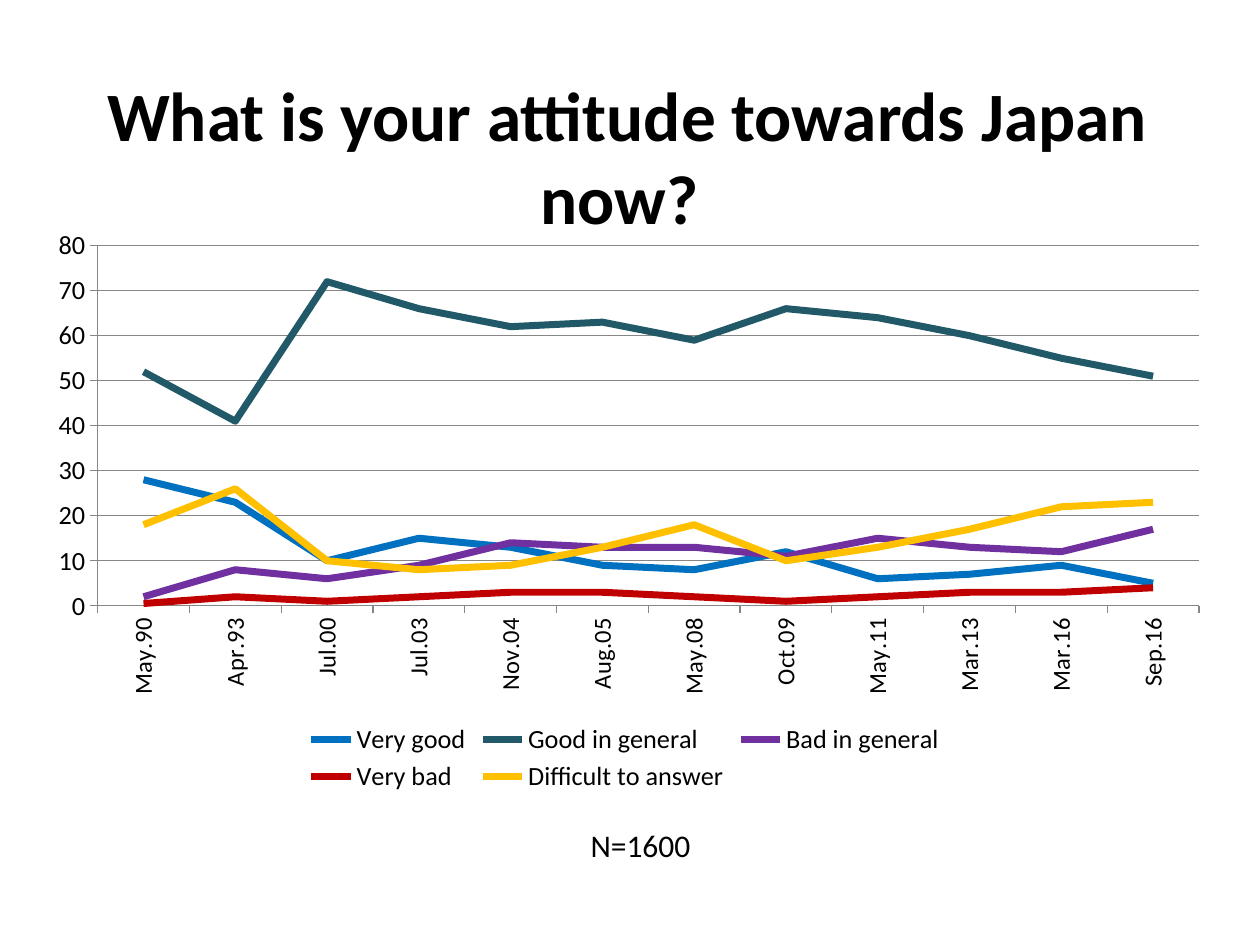
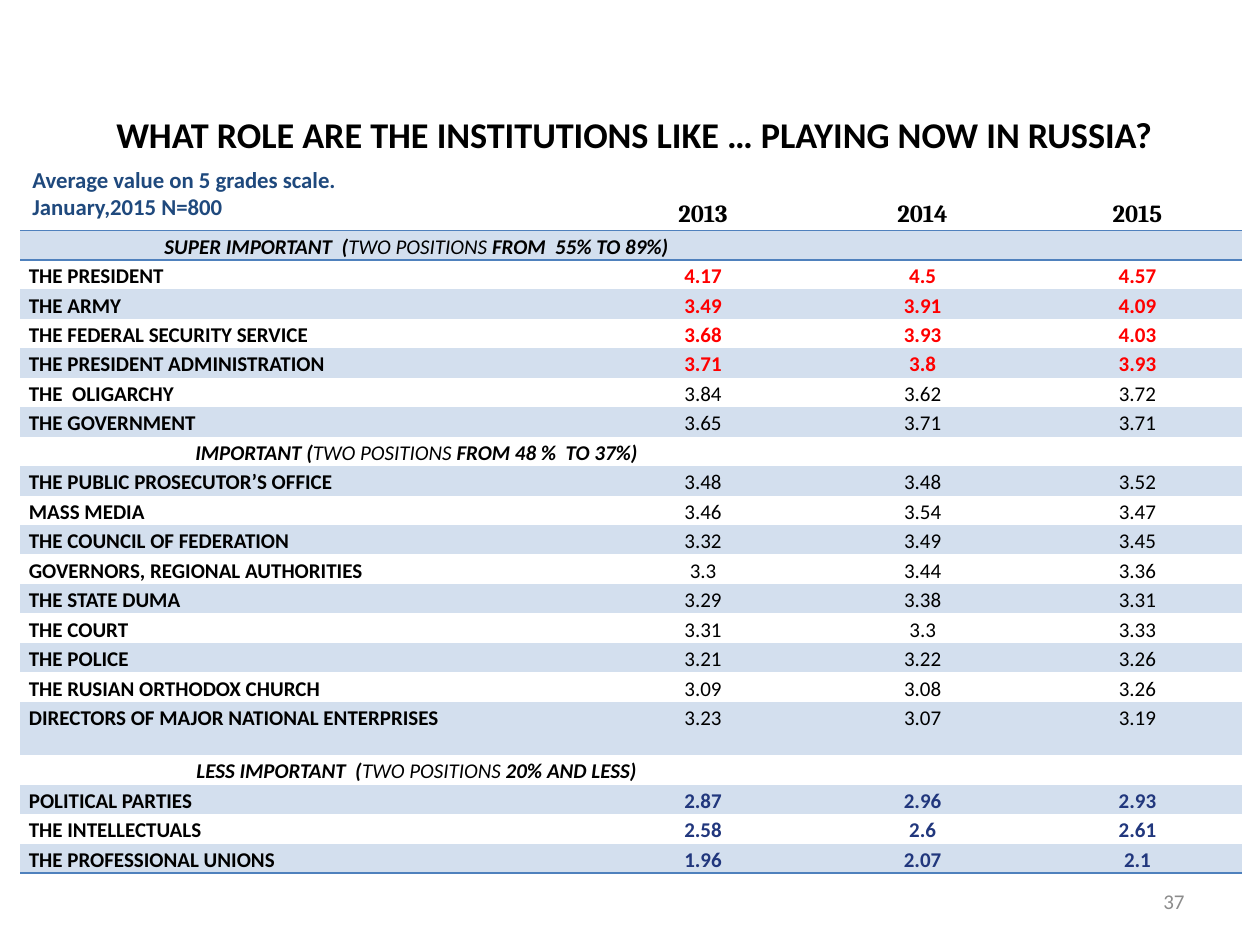
from lxml.etree import SubElement
from pptx import Presentation
from pptx.chart.data import CategoryChartData
from pptx.dml.color import RGBColor
from pptx.enum.chart import XL_CHART_TYPE as ChartType
from pptx.enum.chart import XL_LEGEND_POSITION as LegendPosition
from pptx.enum.chart import XL_TICK_MARK as TickMark
from pptx.enum.text import MSO_ANCHOR as Anchor
from pptx.enum.text import PP_ALIGN as Align
from pptx.oxml import parse_xml
from pptx.oxml.ns import nsdecls, qn
from pptx.util import Pt

COLOURS = {
    "ink": "000000", "paper": "FFFFFF", "band": "D3DFEE", "rule": "4F81BD",
    "note": "1F497D", "number": "8C8C8C", "high": "FF0000", "low": "21377D",
    "grid": "868686", "blue": "0070C0", "teal": "215968", "purple": "7030A0",
    "crimson": "C00000", "amber": "FFC000",
}
PLAIN_TABLE = "{2D5ABB26-0587-4C30-8999-92F81FD0307C}"

SURVEY_DATES = ["May.90", "Apr.93", "Jul.00", "Jul.03", "Nov.04", "Aug.05",
                "May.08", "Oct.09", "May.11", "Mar.13", "Mar.16", "Sep.16"]
ATTITUDES = [
    ("Very good", "blue", [28, 23, 10, 15, 13, 9, 8, 12, 6, 7, 9, 5]),
    ("Good in general", "teal", [52, 41, 72, 66, 62, 63, 59, 66, 64, 60, 55, 51]),
    ("Bad in general", "purple", [2, 8, 6, 9, 14, 13, 13, 11, 15, 13, 12, 17]),
    ("Very bad", "crimson", [0.5, 2, 1, 2, 3, 3, 2, 1, 2, 3, 3, 4]),
    ("Difficult to answer", "amber", [18, 26, 10, 8, 9, 13, 18, 10, 13, 17, 22, 23]),
]

YEARS = ["2013", "2014", "2015"]
RATINGS = [
    (("SUPER IMPORTANT  (", "FROM  55% TO 89%)"), [
        ("THE PRESIDENT", 4.17, 4.5, 4.57),
        ("THE ARMY", 3.49, 3.91, 4.09),
        ("THE FEDERAL SECURITY SERVICE", 3.68, 3.93, 4.03),
        ("THE PRESIDENT ADMINISTRATION", 3.71, 3.8, 3.93),
        ("THE  OLIGARCHY", 3.84, 3.62, 3.72),
        ("THE GOVERNMENT", 3.65, 3.71, 3.71),
    ]),
    (("IMPORTANT (", "FROM 48 %  TO 37%)"), [
        ("THE PUBLIC PROSECUTOR’S OFFICE", 3.48, 3.48, 3.52),
        ("MASS MEDIA", 3.46, 3.54, 3.47),
        ("THE COUNCIL OF FEDERATION", 3.32, 3.49, 3.45),
        ("GOVERNORS, REGIONAL AUTHORITIES", 3.3, 3.44, 3.36),
        ("THE STATE DUMA", 3.29, 3.38, 3.31),
        ("THE COURT", 3.31, 3.3, 3.33),
        ("THE POLICE", 3.21, 3.22, 3.26),
        ("THE RUSIAN ORTHODOX CHURCH", 3.09, 3.08, 3.26),
        ("DIRECTORS OF MAJOR NATIONAL ENTERPRISES", 3.23, 3.07, 3.19),
    ]),
    (("LESS IMPORTANT  (", "20% AND LESS)"), [
        ("POLITICAL PARTIES", 2.87, 2.96, 2.93),
        ("THE INTELLECTUALS", 2.58, 2.6, 2.61),
        ("THE PROFESSIONAL UNIONS", 1.96, 2.07, 2.1),
    ]),
]
TALL_ROW = "DIRECTORS OF MAJOR NATIONAL ENTERPRISES"


def assign(target, **values):
    for name, value in values.items():
        setattr(target, name, value)


def rgb(colour):
    return RGBColor.from_string(COLOURS[colour])


def style_font(font, size, colour="ink", name="Calibri", **values):
    assign(font, size=Pt(size), name=name, **values)
    font.color.rgb = rgb(colour)


def style_line(line, colour, width):
    line.width = Pt(width)
    line.color.rgb = rgb(colour)


def manual_layout(x, y, w, h, inner=False):
    target = '<c:layoutTarget val="inner"/>' if inner else ""
    modes = "".join(f'<c:{side}Mode val="edge"/>' for side in "xy")
    sizes = "".join(f'<c:{key} val="{value}"/>'
                    for key, value in zip("xywh", (x, y, w, h)))
    return parse_xml(f'<c:layout {nsdecls("c")}><c:manualLayout>'
                     f'{target}{modes}{sizes}</c:manualLayout></c:layout>')


class Deck:
    def __init__(self):
        self.presentation = Presentation()
        assign(self.presentation, slide_width=Pt(720), slide_height=Pt(540))
        self.slide = None

    def new_slide(self):
        self.slide = self.presentation.slides.add_slide(
            self.presentation.slide_layouts[6])

    def text(self, box, words, size, align=Align.CENTER, **font):
        frame = self.slide.shapes.add_textbox(*map(Pt, box)).text_frame
        assign(frame, word_wrap=True, vertical_anchor=Anchor.MIDDLE)
        self.set_runs(frame.paragraphs[0], [(words, font)], size, align)

    def title(self, box, words, size):
        self.text(box, words, size, bold=True)

    def set_runs(self, paragraph, runs, size, align=Align.LEFT, spacing=None):
        assign(paragraph, alignment=align, line_spacing=spacing)
        for words, font in runs:
            run = paragraph.add_run()
            run.text = words
            style_font(run.font, size, **font)
        if not runs:
            SubElement(paragraph._p, qn("a:endParaRPr"), sz=str(size * 100))

    def table(self, left, top, widths, heights):
        table = self.slide.shapes.add_table(
            len(heights), len(widths), Pt(left), Pt(top),
            Pt(sum(widths)), Pt(sum(heights))).table
        assign(table, first_row=False, horz_banding=False)
        table._tbl.tblPr.find(qn("a:tableStyleId")).text = PLAIN_TABLE
        for column, width in zip(table.columns, widths):
            column.width = Pt(width)
        for row, height in zip(table.rows, heights):
            row.height = Pt(height)
        return table

    def cell(self, cell, runs, size, align=Align.CENTER, fill=None, side=0,
             spacing=None, anchor=Anchor.TOP):
        assign(cell, margin_left=Pt(side), margin_right=Pt(side),
               margin_top=0, margin_bottom=0, vertical_anchor=anchor)
        if fill:
            cell.fill.solid()
            cell.fill.fore_color.rgb = rgb(fill)
        else:
            cell.fill.background()
        self.set_runs(cell.text_frame.paragraphs[0], runs, size, align, spacing)

    def rule(self, cell, edge):
        cell._tc.get_or_add_tcPr().insert(0, parse_xml(
            f'<a:ln{edge} {nsdecls("a")} w="{Pt(1)}"><a:solidFill>'
            f'<a:srgbClr val="{COLOURS["rule"]}"/></a:solidFill></a:ln{edge}>'))

    def line_chart(self, box, categories, lines):
        data = CategoryChartData()
        data.categories = categories
        for name, _, values in lines:
            data.add_series(name, values)
        chart = self.slide.shapes.add_chart(
            ChartType.LINE, *map(Pt, box), data).chart
        assign(chart, has_title=False, has_legend=True)
        style_font(chart.font, 10)
        plot = chart.plots[0]
        plot.vary_by_categories = False
        for series, (_, colour, _) in zip(plot.series, lines):
            series.smooth = False
            style_line(series.format.line, colour, 4)

        dates, scale = chart.category_axis, chart.value_axis
        for axis, size in ((dates, 14), (scale, 15)):
            assign(axis, major_tick_mark=TickMark.OUTSIDE,
                   minor_tick_mark=TickMark.NONE)
            style_line(axis.format.line, "grid", 0.75)
            style_font(axis.tick_labels.font, size)
        dates._element.find(qn("c:txPr")).find(qn("a:bodyPr")).set("rot", "-5400000")
        assign(scale, minimum_scale=0, maximum_scale=80, major_unit=10,
               has_major_gridlines=True)
        style_line(scale.major_gridlines.format.line, "grid", 0.75)

        assign(chart.legend, position=LegendPosition.BOTTOM, include_in_layout=False)
        style_font(chart.legend.font, 15)
        chart.legend._element.find(qn("c:legendPos")).addnext(
            manual_layout(0.22, 0.86, 0.57, 0.13))
        area = chart._chartSpace.chart.plotArea
        for layout in area.findall(qn("c:layout")):
            area.remove(layout)
        area.insert(0, manual_layout(0.05, 0.05, 0.94, 0.62, inner=True))


def rating_tone(latest):
    if latest >= 3.9:
        return {"colour": "high", "bold": True}
    if latest < 3:
        return {"colour": "low", "bold": True}
    return {"bold": False}


def rating_rows():
    year_font = {"name": "Cambria", "bold": True}
    yield [[]] + [[(year, year_font)] for year in YEARS]
    for (opening, closing), institutions in RATINGS:
        parts = (opening, True), ("TWO POSITIONS ", False), (closing, True)
        heading = [(words, {"bold": bold, "italic": True}) for words, bold in parts]
        yield [heading, [], [], []]
        for institution, *scores in institutions:
            tone = rating_tone(scores[-1])
            yield ([[(institution, {"bold": True})]]
                   + [[(f"{score:g}", tone)] for score in scores])


def attitude_slide(deck):
    deck.new_slide()
    deck.title((34, 71, 649, 35), "What is your attitude towards Japan now? ", 39.6)
    deck.line_chart((22.3, 123.8, 669.6, 332), SURVEY_DATES, ATTITUDES)
    sample = deck.table(270, 472.3, [192], [23])
    deck.cell(sample.cell(0, 0), [("N=1600", {})], 18, fill="paper",
              anchor=Anchor.MIDDLE)


def institutions_slide(deck):
    deck.new_slide()
    deck.title((16.5, 62, 692, 29.5),
               "WHAT ROLE ARE THE INSTITUTIONS LIKE … PLAYING NOW IN RUSSIA?", 20.7)
    deck.text((516, 500.4, 168, 28.8), "37", 12, Align.RIGHT, colour="number")

    rows = list(rating_rows())
    heights = [19] + [30.5 if row[0][0][0] == TALL_ROW else 16.85
                      for row in rows[1:]]
    ratings = deck.table(11.5, 112.3, [327.5, 125.5, 125.5, 120], heights)
    last = len(rows) - 1
    for index, row in enumerate(rows):
        is_heading = index > 0 and not row[1]
        for column, runs in enumerate(row):
            cell = ratings.cell(index, column)
            centred = column > 0 or is_heading
            deck.cell(cell, runs, 12 if index else 14,
                      Align.CENTER if centred else Align.LEFT,
                      "band" if index % 2 else None, 5, 1.15)
            if index in (0, last):
                deck.rule(cell, "B")
            elif index == 1:
                deck.rule(cell, "T")
        if is_heading:
            ratings.cell(index, 0).merge(ratings.cell(index, 1))

    deck.text((11.5, 95.8, 196.5, 28.8),
              "Average value on 5 grades scale. January,2015 N=800", 13,
              Align.LEFT, colour="note", bold=True)


def main():
    deck = Deck()
    attitude_slide(deck)
    institutions_slide(deck)
    deck.presentation.save("out.pptx")


if __name__ == "__main__":
    main()
